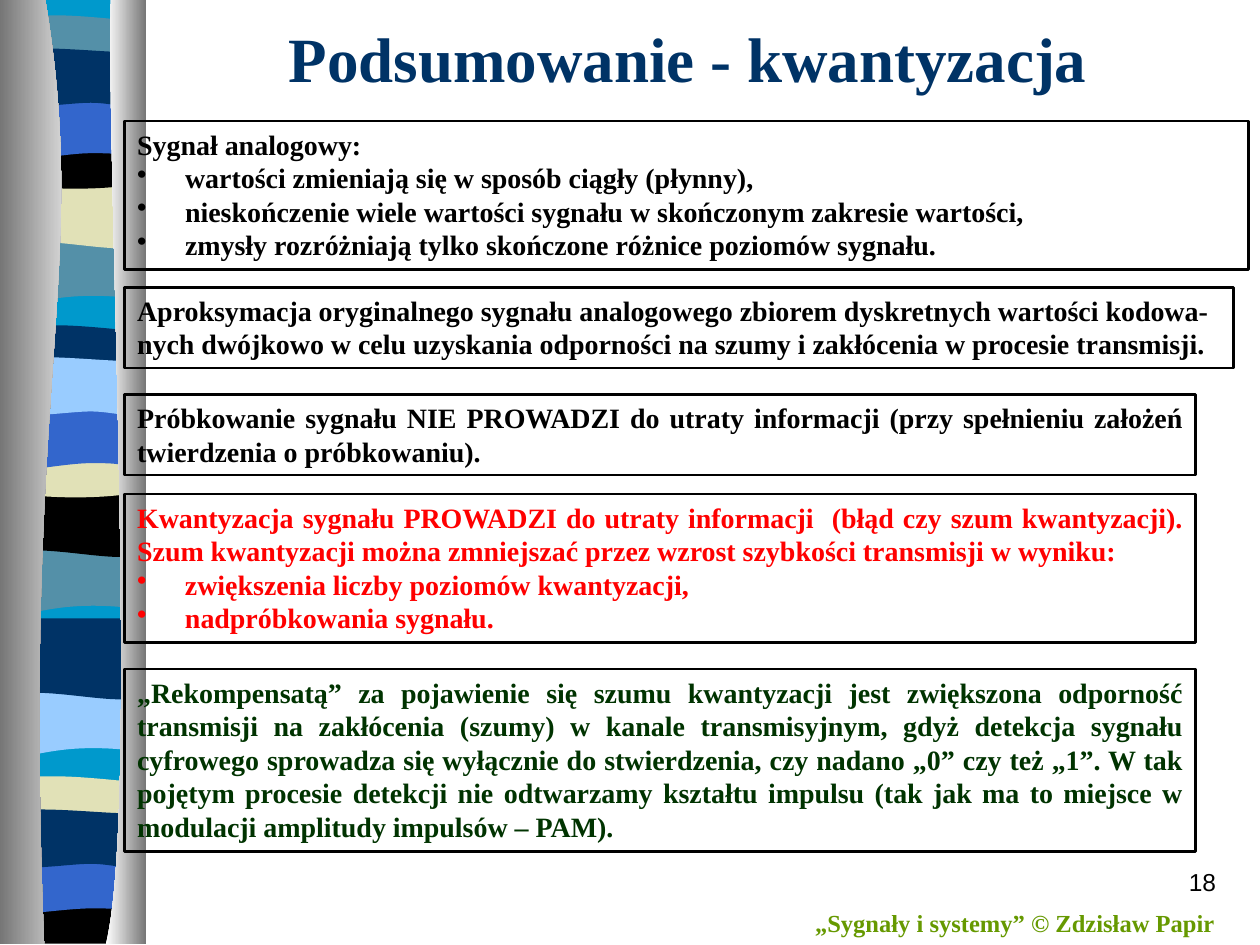
import dataclasses
import typing

import lxml.etree
import pptx
import pptx.dml.color
import pptx.enum.shapes
import pptx.enum.text
import pptx.oxml.ns
import pptx.util

PX = 9144  # EMU per px, 100 px to the inch
FINE = 10  # freeform units per px
STRETCH = 1.3  # bands overlap their neighbours by this vertical factor
LEFT, RIGHT = 5, 114  # edges of the ribbon
INDENT = 38
SERIF = "Times New Roman"
ALIGN = pptx.enum.text.PP_ALIGN
ANCHOR = pptx.enum.text.MSO_ANCHOR

# An outline is a list of steps: 2 numbers for a line, 6 for a Bézier curve
Outline = list[tuple[float, ...]]


@dataclasses.dataclass
class Band:
    outline: str
    top: int
    color: str
    stretch: float = STRETCH


@dataclasses.dataclass
class TextBlock:
    left: int
    top: int
    width: int
    height: int
    lines: list[str]
    color: str = "000000"
    align: typing.Any = ALIGN.LEFT
    bullets: list[str] = dataclasses.field(default_factory=list)
    size: int = 16
    font: str = SERIF
    bold: bool = True
    framed: bool = True
    wrap: bool = True
    anchor: typing.Any = ANCHOR.TOP


# Ribbon outlines, measured down from the top of each band
OUTLINES: dict[str, Outline] = {
    "base": [(RIGHT, 0), (RIGHT, 747), (LEFT, 747), (LEFT, 0)],
    "swell": [(RIGHT, 0), (RIGHT, 47), (39, 39, 24, 55, LEFT, 47), (LEFT, 0)],
    "dip": [(RIGHT, 0), (RIGHT, 47), (96, 55, 39, 41, LEFT, 47), (LEFT, 0)],
    "lens": [(RIGHT, 0), (RIGHT, 24), (96, 29, 24, 29, LEFT, 24), (LEFT, 0),
             (12, -5, 29, -4, 47, -4), (65, -4, 100, -1, RIGHT, 0)],
    "bowl": [(RIGHT, 0), (RIGHT, 32), (96, 38, 24, 38, LEFT, 32), (LEFT, 0),
             (72, 5, 91, 0, RIGHT, 0)],
    "arch": [(RIGHT, 0), (RIGHT, 47), (97, 42, 90, 42, 72, 42),
             (54, 42, 22, 47, LEFT, 47), (LEFT, 0)],
    "wave": [(RIGHT, 0), (RIGHT, 31), (107, 36, 90, 31, 72, 31),
             (54, 31, 17, 36, LEFT, 31), (LEFT, 0),
             (21, -5, 79, 0, 97, 0), (115, 0, 110, 0, RIGHT, 0)],
    "foot": [(RIGHT, 0), (RIGHT, 37), (LEFT, 37), (LEFT, 0), (72, 5, 91, 0, RIGHT, 0)],
}

CYAN, TEAL, SAND, BLUE = "0099CC", "5490A8", "E1E1B7", "3366CC"
NAVY, SKY, BLACK = "003366", "99CCFF", "000000"
BANDS = [
    Band("base", 0, CYAN, 1),
    Band("swell", 185, TEAL), Band("dip", 141, SAND), Band("lens", 21, TEAL),
    Band("bowl", 108, BLACK), Band("arch", 74, BLUE), Band("wave", 46, NAVY),
    Band("swell", 431, TEAL), Band("dip", 386, BLACK), Band("lens", 267, NAVY),
    Band("bowl", 353, SAND), Band("arch", 320, BLUE), Band("wave", 291, SKY),
    Band("swell", 544, SKY), Band("dip", 499, NAVY), Band("lens", 625, SAND),
    Band("foot", 712, BLACK, 1), Band("arch", 679, BLUE, 1), Band("wave", 650, NAVY),
]

# Grey curtains on both sides of the ribbon
LEFT_CURTAIN: Outline = [(36, 0), (72, 216, 17, 296, 35, 749), (0, 749), (0, 0)]
RIGHT_CURTAIN: Outline = [(88, 0), (84, 125, 111, 646, 84, 749), (116, 749), (116, 0)]

BLOCKS = [
    TextBlock(637, 716, 341, 34, ["„Sygnały i systemy” © Zdzisław Papir"], "669900",
              size=14, framed=False, wrap=False),
    TextBlock(121, -17, 850, 125, ["Podsumowanie - kwantyzacja"], NAVY, ALIGN.CENTER,
              size=36, framed=False, anchor=ANCHOR.MIDDLE),
    TextBlock(99, 228, 880, 64, [
        "Aproksymacja oryginalnego sygnału analogowego zbiorem dyskretnych wartości "
        "kodowa-nych dwójkowo w celu uzyskania odporności na szumy i zakłócenia w "
        "procesie transmisji."]),
    TextBlock(767, 683, 208, 50, ["18"], align=ALIGN.RIGHT, size=14, font="Arial",
              bold=False, framed=False),
    TextBlock(99, 313, 850, 64, [
        "Próbkowanie sygnału NIE PROWADZI do utraty informacji (przy spełnieniu "
        "założeń twierdzenia o próbkowaniu)."], align=ALIGN.JUSTIFY),
    TextBlock(99, 96, 892, 118, ["Sygnał analogowy:"], bullets=[
        "wartości zmieniają się w sposób ciągły (płynny),",
        "nieskończenie wiele wartości sygnału w skończonym zakresie wartości,",
        "zmysły rozróżniają tylko skończone różnice poziomów sygnału."]),
    TextBlock(99, 392, 850, 118, [
        "Kwantyzacja sygnału PROWADZI do utraty informacji  (błąd czy szum "
        "kwantyzacji). Szum kwantyzacji można zmniejszać przez wzrost szybkości "
        "transmisji w wyniku:"], "FF0000", ALIGN.JUSTIFY, bullets=[
        "zwiększenia liczby poziomów kwantyzacji,",
        "nadpróbkowania sygnału."]),
    TextBlock(99, 531, 850, 145, [
        "„Rekompensatą” za pojawienie się szumu kwantyzacji jest zwiększona odporność "
        "transmisji na zakłócenia (szumy) w kanale transmisyjnym, gdyż detekcja "
        "sygnału cyfrowego sprowadza się wyłącznie do stwierdzenia, czy nadano „0” czy "
        "też „1”. W tak pojętym procesie detekcji nie odtwarzamy kształtu impulsu (tak "
        "jak ma to miejsce w modulacji amplitudy impulsów – PAM)."],
        "003300", ALIGN.JUSTIFY),
]


def rgb(color: str) -> pptx.dml.color.RGBColor:
    return pptx.dml.color.RGBColor.from_string(color)


def place_outline(outline: Outline, top: int, stretch: float) -> Outline:
    """Move an outline to its top and stretch it about its middle."""
    heights = [y for step in outline for y in step[1::2]]
    middle = (min(heights) + max(heights)) / 2
    return [tuple(value if index % 2 == 0 else top + middle + (value - middle) * stretch
                  for index, value in enumerate(step)) for step in outline]


def bend_curves(shape: typing.Any, outline: Outline) -> None:
    """Join the three line points of each curve step into one Bézier segment."""
    lines = iter(shape._element.findall(".//" + pptx.oxml.ns.qn("a:lnTo")))
    for step in outline[1:]:
        line = next(lines)
        if len(step) == 6:
            curve = lxml.etree.Element(pptx.oxml.ns.qn("a:cubicBezTo"))
            line.addprevious(curve)
            for point in (line, next(lines), next(lines)):
                curve.append(point[0])
                point.getparent().remove(point)


def draw_outline(page: typing.Any, outline: Outline, colors: list[str]) -> None:
    """Draw a filled outline; two colours make a left-to-right gradient."""
    start, *rest = [(step[i] * FINE, step[i + 1] * FINE)
                    for step in outline for i in range(0, len(step), 2)]
    builder = page.shapes.build_freeform(*start, scale=PX / FINE)
    builder.add_line_segments(rest, close=True)
    shape = builder.convert_to_shape()
    bend_curves(shape, outline)
    shape.shadow.inherit = False
    shape.line.fill.background()
    if len(colors) == 1:
        shape.fill.solid()
        shape.fill.fore_color.rgb = rgb(colors[0])
        return
    shape.fill.gradient()
    shape.fill.gradient_angle = 0
    for stop, color in zip(shape.fill.gradient_stops, colors):
        stop.color.rgb = rgb(color)


def add_bullet(para: typing.Any) -> None:
    properties = para._p.get_or_add_pPr()
    properties.set("marL", str(INDENT * PX))
    properties.set("indent", str(-INDENT * PX))
    lxml.etree.SubElement(properties, pptx.oxml.ns.qn("a:buFontTx"))
    bullet = lxml.etree.SubElement(properties, pptx.oxml.ns.qn("a:buChar"))
    bullet.set("char", "•")


def draw_block(page: typing.Any, block: TextBlock) -> None:
    place = [side * PX for side in (block.left, block.top, block.width, block.height)]
    if block.framed:
        box = page.shapes.add_shape(pptx.enum.shapes.MSO_SHAPE.RECTANGLE, *place)
        box.shadow.inherit = False
        box.fill.background()
        box.line.color.rgb = rgb(BLACK)
        box.line.width = pptx.util.Pt(1.5)
    else:
        box = page.shapes.add_textbox(*place)
    frame = box.text_frame
    frame.word_wrap = block.wrap
    frame.vertical_anchor = block.anchor
    for index, text in enumerate(block.lines + block.bullets):
        para = frame.add_paragraph() if index else frame.paragraphs[0]
        para.alignment = block.align
        if index >= len(block.lines):
            add_bullet(para)
        span = para.add_run()
        span.text = text
        span.font.name = block.font
        span.font.size = pptx.util.Pt(block.size)
        span.font.bold = block.bold
        span.font.color.rgb = rgb(block.color)


def main() -> None:
    deck = pptx.Presentation()
    deck.slide_width, deck.slide_height = 1000 * PX, 750 * PX
    page = deck.slides.add_slide(deck.slide_layouts[6])
    # Ribbon and its curtains
    for band in BANDS:
        outline = place_outline(OUTLINES[band.outline], band.top, band.stretch)
        draw_outline(page, outline, [band.color])
    draw_outline(page, LEFT_CURTAIN, ["767676", "FFFFFF"])
    draw_outline(page, RIGHT_CURTAIN, ["FFFFFF", "767676"])
    # Title, framed statements, page number and footer
    for block in BLOCKS:
        draw_block(page, block)
    deck.save("out.pptx")


if __name__ == "__main__":
    main()
